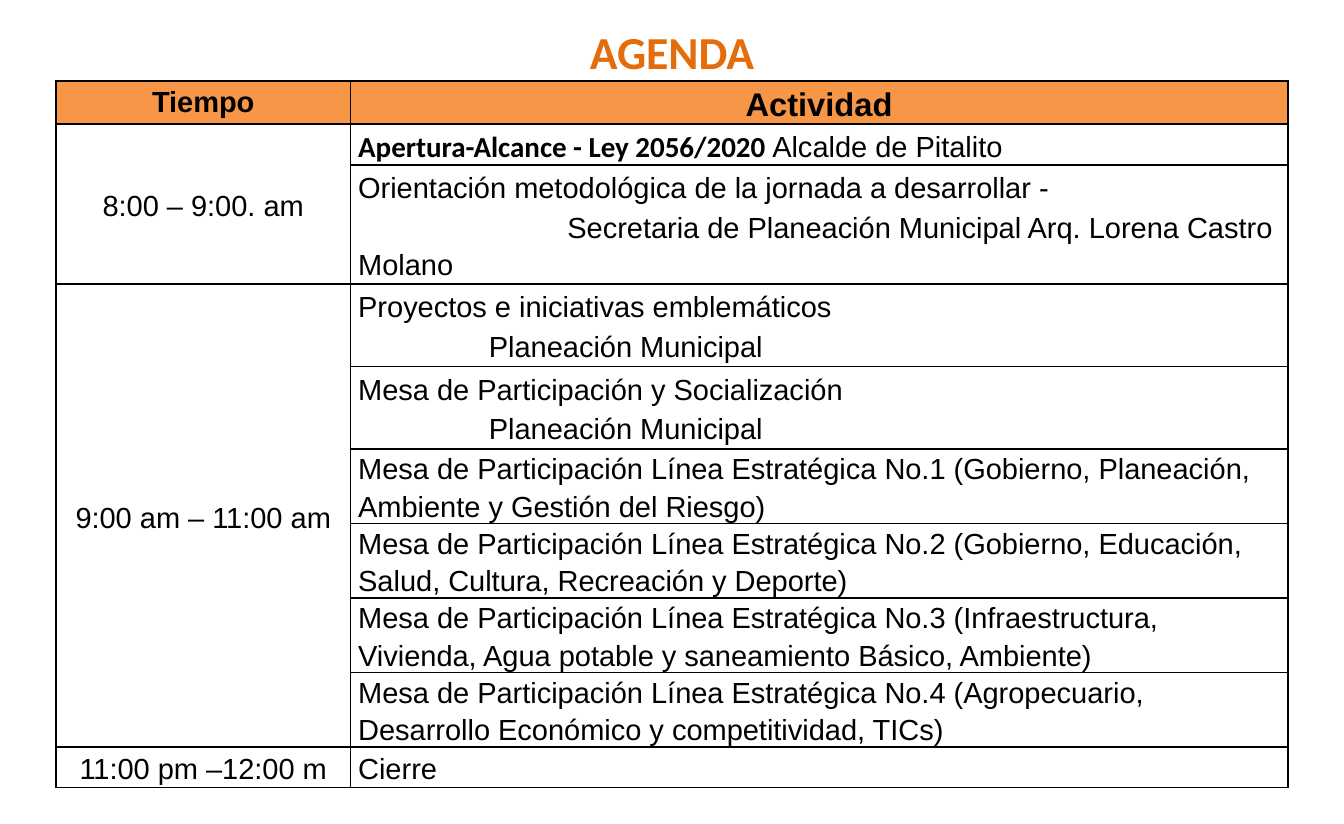
import dataclasses

import pptx
import pptx.dml.color
import pptx.enum.text
import pptx.oxml
import pptx.oxml.ns
import pptx.util

Inches = pptx.util.Inches
Pt = pptx.util.Pt
RGB = pptx.dml.color.RGBColor.from_string
ALIGN = pptx.enum.text.PP_ALIGN
MIDDLE = pptx.enum.text.MSO_ANCHOR.MIDDLE


@dataclasses.dataclass(frozen=True)
class Theme:
    """Colours, fonts and type sizes of the slide."""
    title: str = "E46C0A"
    header: str = "F79646"
    row: str = "FFFFFF"
    ink: str = "000000"
    heading_font: str = "Calibri"
    body_font: str = "Arial"
    title_size: float = 25.2
    header_size: float = 18
    body_size: float = 16


THEME = Theme()
COLUMNS = [2.25, 7.17]
HEADERS = [("Tiempo", THEME.body_size), ("Actividad", THEME.header_size)]
HEADER_HEIGHT = 0.33
LINE = "Mesa de Participación Línea Estratégica "
OPENING = "Apertura-Alcance - Ley 2056/2020 "

# Each activity: row height, paragraphs, first-line indent of later paragraphs.
AGENDA = [
    ("8:00 – 9:00. am", [
        (0.31, [OPENING + "Alcalde de Pitalito"], 0),
        (0.91, ["Orientación metodológica de la jornada a desarrollar -",
                "Secretaria de Planeación Municipal Arq. Lorena Castro Molano"], 1.6),
    ]),
    ("9:00 am – 11:00 am", [
        (0.63, ["Proyectos e iniciativas emblemáticos", "Planeación Municipal"], 1),
        (0.63, ["Mesa de Participación y Socialización", "Planeación Municipal"], 1),
        (0.57, [LINE + "No.1 (Gobierno, Planeación, Ambiente y Gestión del Riesgo)"], 0),
        (0.57, [LINE + "No.2 (Gobierno, Educación, Salud, Cultura, Recreación y Deporte)"], 0),
        (0.57, [LINE + "No.3 (Infraestructura, Vivienda, Agua potable y saneamiento Básico, Ambiente)"], 0),
        (0.57, [LINE + "No.4 (Agropecuario, Desarrollo Económico y competitividad, TICs)"], 0),
    ]),
    ("11:00 pm –12:00 m", [(0.31, ["Cierre"], 0)]),
]


def set_font(font, size, color=THEME.ink, name=THEME.body_font, bold=False):
    """Apply type settings to a font."""
    font.name, font.size, font.bold = name, Pt(size), bold
    font.color.rgb = RGB(color)


def style_cell(cell, fill):
    """Set the fill, margins and thin black borders of a cell."""
    cell.margin_left = cell.margin_right = Inches(0.06)
    cell.margin_top = cell.margin_bottom = 0
    tcPr = cell._tc.get_or_add_tcPr()
    for side in ("lnL", "lnR", "lnT", "lnB"):
        tcPr.append(pptx.oxml.parse_xml(
            f'<a:{side} {pptx.oxml.ns.nsdecls("a")} w="12700"><a:solidFill>'
            f'<a:srgbClr val="{THEME.ink}"/></a:solidFill></a:{side}>'))
    cell.fill.solid()
    cell.fill.fore_color.rgb = RGB(fill)


def write_cell(cell, paragraphs, size=THEME.body_size, align=ALIGN.LEFT, bold=False, indent=0):
    """Write paragraphs in a cell, indenting the first line of each later one."""
    tf = cell.text_frame
    for i, text in enumerate(paragraphs):
        p = tf.add_paragraph() if i else tf.paragraphs[0]
        p.alignment, p.line_spacing = align, 1.15
        if i:
            p.space_before = Pt(1.5)
            pPr = p._p.get_or_add_pPr()
            pPr.set("marL", "0")
            pPr.set("indent", str(Inches(indent)))
        set_font(p.font, size, bold=bold)
        if text.startswith(OPENING):
            r = p.add_run()
            r.text = OPENING
            r.font.name, r.font.bold = THEME.heading_font, True
            text = text.removeprefix(OPENING)
        p.add_run().text = text
    if len(paragraphs) > 1:
        cell.margin_top = Inches(0.02)


def add_title(slide, text, left, top, width, height):
    """Place the slide title in its box."""
    sp = slide.shapes.title
    sp.left, sp.top, sp.width, sp.height = map(Inches, (left, top, width, height))
    tf = sp.text_frame
    tf.text, tf.vertical_anchor = text, MIDDLE
    p = tf.paragraphs[0]
    p.alignment = ALIGN.CENTER
    set_font(p.font, THEME.title_size, THEME.title, THEME.heading_font, True)


def add_agenda(slide, left, top):
    """Draw the agenda table with one merged time cell per block."""
    heights = [HEADER_HEIGHT] + [h for _, acts in AGENDA for h, _, _ in acts]
    frame = slide.shapes.add_table(
        len(heights), len(COLUMNS), Inches(left), Inches(top),
        Inches(sum(COLUMNS)), Inches(sum(heights)))
    table = frame.table
    for column, width in zip(table.columns, COLUMNS):
        column.width = Inches(width)
    for i, height in enumerate(heights):
        table.rows[i].height = Inches(height)
        for cell in table.rows[i].cells:
            style_cell(cell, THEME.row if i else THEME.header)
    for j, (text, size) in enumerate(HEADERS):
        write_cell(table.cell(0, j), [text], size, ALIGN.CENTER, True)
    row = 1
    for time, activities in AGENDA:
        time_cell = table.cell(row, 0)
        if len(activities) > 1:
            time_cell.merge(table.cell(row + len(activities) - 1, 0))
        time_cell.vertical_anchor = MIDDLE
        write_cell(time_cell, [time], align=ALIGN.CENTER)
        for _, paragraphs, indent in activities:
            write_cell(table.cell(row, 1), paragraphs, indent=indent)
            row += 1
    table.cell(row - 1, 1).vertical_anchor = MIDDLE


def main():
    """Build and save the agenda slide."""
    prs = pptx.Presentation()
    prs.slide_width, prs.slide_height = Inches(10.28), Inches(6.3)
    slide = prs.slides.add_slide(prs.slide_layouts[5])
    add_title(slide, "AGENDA", 0.77, 0.16, 8.74, 0.47)
    add_agenda(slide, 0.43, 0.62)
    prs.save("out.pptx")


if __name__ == "__main__":
    main()
